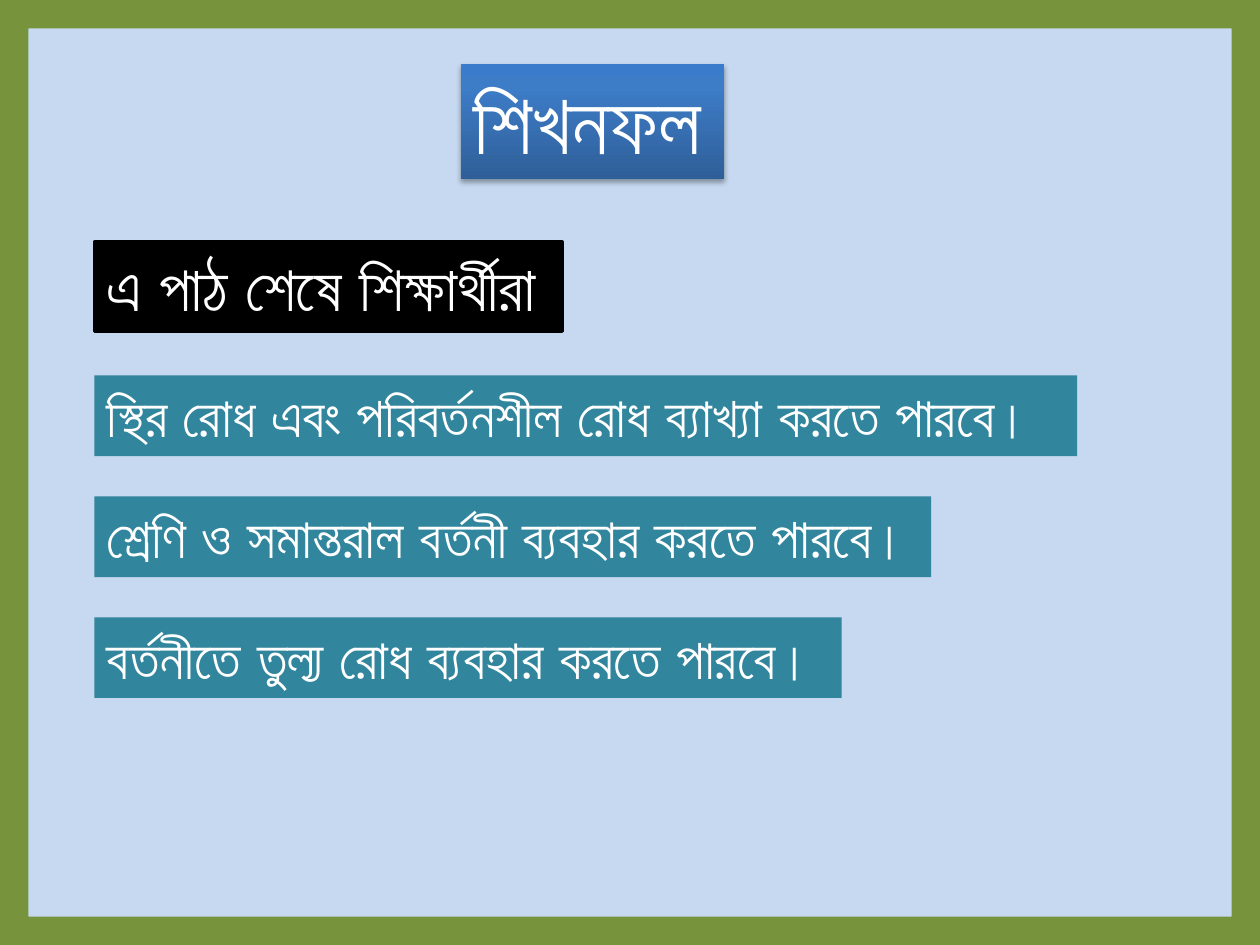
from copy import deepcopy

from lxml import etree
from pptx import Presentation
from pptx.dml.color import RGBColor
from pptx.enum.shapes import MSO_SHAPE
from pptx.enum.text import MSO_ANCHOR, MSO_AUTO_SIZE
from pptx.oxml.ns import qn
from pptx.util import Inches, Pt

FRAME = MSO_SHAPE.FRAME
TOP = MSO_ANCHOR.TOP
NO_FIT = MSO_AUTO_SIZE.NONE

TITLE = "শিখনফল"
INTRO = "এ পাঠ শেষে শিক্ষার্থীরা"
OUTCOMES = [  # text, width of its bar
    ("স্থির রোধ এবং পরিবর্তনশীল রোধ ব্যাখ্যা করতে পারবে।", 7.8),
    ("শ্রেণি ও সমান্তরাল বর্তনী ব্যবহার করতে পারবে।", 6.64),
    ("বর্তনীতে তুল্য রোধ ব্যবহার করতে পারবে।", 5.93),
]

COLORS = {
    "background": "C6D9F1",
    "frame": "77933C",
    "intro": "000000",
    "outcome": "31859C",
    "text": "FFFFFF",
    "shadow": "000000",
}
TITLE_GRADIENT = [(0, "2F5F99"), (0.8, "3D7CC7"), (1, "3A7CCB")]

FONT = "Arial"
SLIDE_W, SLIDE_H = 10, 7.5
LEFT = 0.75
OUTCOME_TOP, OUTCOME_H, OUTCOME_STEP = 2.98, 0.64, 0.96


def rgb(name):
    return RGBColor.from_string(COLORS[name])


def add_label(slide, text, left, top, width, height, size, fill=None):
    sp = slide.shapes.add_textbox(*map(Inches, (left, top, width, height)))
    if fill:
        sp.fill.solid()
        sp.fill.fore_color.rgb = rgb(fill)
    tf = sp.text_frame
    tf.word_wrap = True
    tf.auto_size = NO_FIT
    tf.vertical_anchor = TOP
    r = tf.paragraphs[0].add_run()
    r.text = text
    r.font.name = FONT
    r.font.size = Pt(size)
    r.font.color.rgb = rgb("text")
    etree.SubElement(r.font._element, qn("a:cs"), typeface=FONT)
    return sp


def fill_gradient(sp, stops, angle):
    sp.fill.gradient()
    sp.fill.gradient_angle = angle
    gs_list = sp._element.spPr.find(".//" + qn("a:gsLst"))
    while len(gs_list) < len(stops):
        gs_list.append(deepcopy(gs_list[-1]))
    for stop, (position, color) in zip(sp.fill.gradient_stops, stops):
        stop.position = position
        stop.color.rgb = RGBColor.from_string(color)


def add_shadow(sp, color, opacity, blur, distance):
    """Drop a shadow straight down; opacity in percent, lengths in points."""
    effects = etree.SubElement(sp._element.spPr, qn("a:effectLst"))
    shadow = etree.SubElement(
        effects, qn("a:outerShdw"), blurRad=str(Pt(blur)),
        dist=str(Pt(distance)), dir="5400000", rotWithShape="0")
    clr = etree.SubElement(shadow, qn("a:srgbClr"), val=COLORS[color])
    etree.SubElement(clr, qn("a:alpha"), val=str(opacity * 1000))


def main():
    prs = Presentation()
    prs.slide_width, prs.slide_height = Inches(SLIDE_W), Inches(SLIDE_H)
    slide = prs.slides.add_slide(prs.slide_layouts[6])
    slide.background.fill.solid()
    slide.background.fill.fore_color.rgb = rgb("background")

    title = add_label(slide, TITLE, 3.66, 0.51, 2.09, 0.91, 48)
    fill_gradient(title, TITLE_GRADIENT, 90)
    add_shadow(title, "shadow", 35, 3.1, 1.8)

    intro = add_label(slide, INTRO, LEFT, 1.92, 3.71, 0.71, 36, fill="intro")
    intro.line.color.rgb = rgb("intro")
    intro.line.width = Pt(2)

    for i, (text, width) in enumerate(OUTCOMES):
        top = OUTCOME_TOP + i * OUTCOME_STEP
        add_label(slide, text, LEFT, top, width, OUTCOME_H, 32, fill="outcome")

    frame = slide.shapes.add_shape(FRAME, 0, 0, prs.slide_width, prs.slide_height)
    frame.adjustments[0] = 0.03
    frame.shadow.inherit = False
    frame.fill.solid()
    frame.fill.fore_color.rgb = rgb("frame")
    frame.line.fill.background()

    prs.save("out.pptx")


if __name__ == "__main__":
    main()
